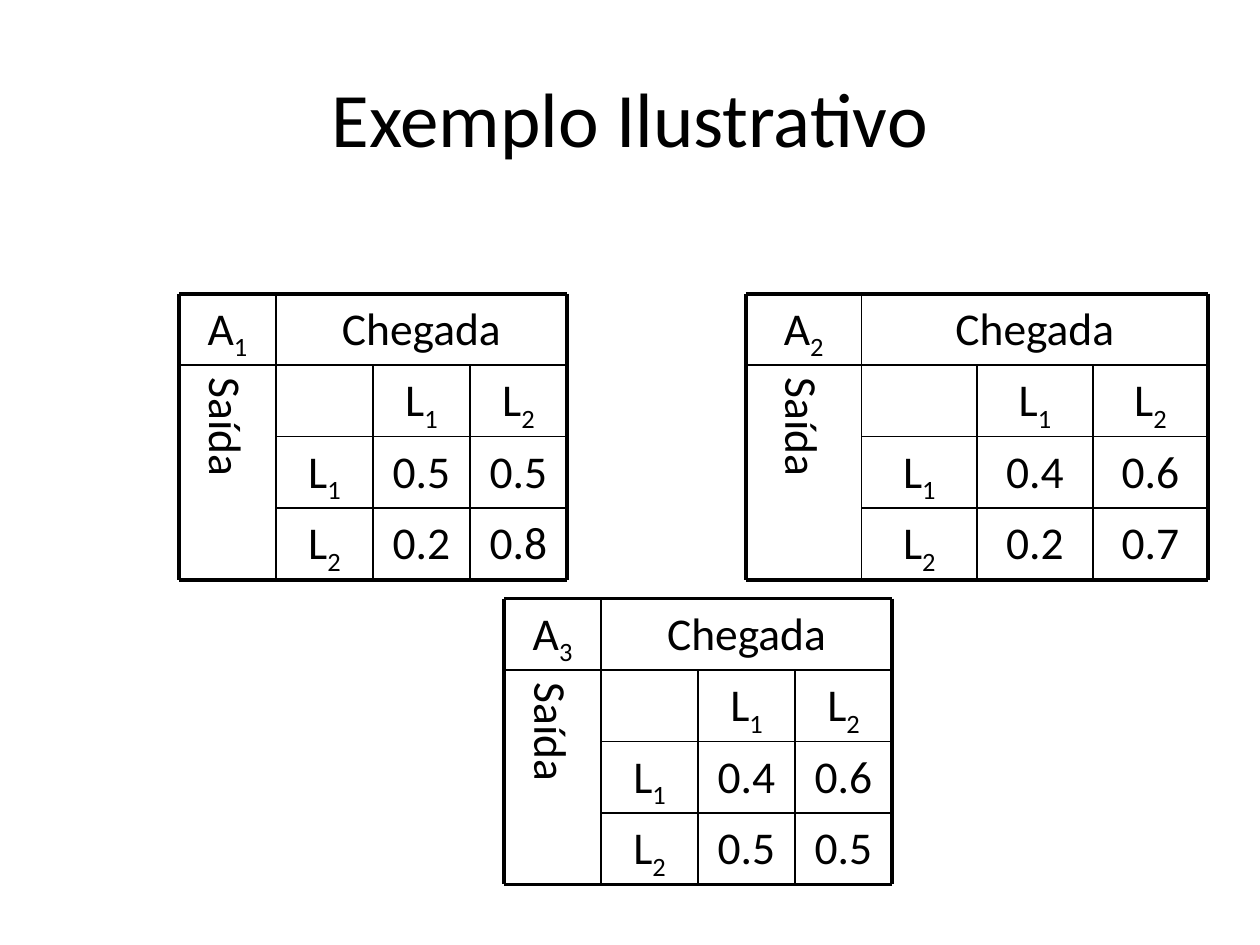
"""Build the slide with the three transition tables of the worked example."""
from lxml import etree
from pptx import Presentation
from pptx import util as u
from pptx.dml import color
from pptx.enum import shapes, text
from pptx.oxml import ns


def rgb(value):
    return color.RGBColor.from_string(value)


class Deck:
    FONT, INK = "Calibri", "000000"
    TITLE_SIZE, CELL_SIZE = 44, 26
    THICK, THIN = 2.25, 1

    def __init__(self):
        self.presentation = Presentation()
        self.presentation.slide_width = u.Inches(10)
        self.presentation.slide_height = u.Inches(7.5)
        layout = self.presentation.slide_layouts[5]
        self.slide = self.presentation.slides.add_slide(layout)

    def style(self, paragraph, size, align=text.PP_ALIGN.CENTER):
        paragraph.alignment = align
        font = paragraph.font
        font.name, font.size = self.FONT, u.Pt(size)
        font.color.rgb = rgb(self.INK)

    def title(self, words, left, top, width, height):
        heading = self.slide.shapes.title
        heading.left, heading.top = u.Inches(left), u.Inches(top)
        heading.width, heading.height = u.Inches(width), u.Inches(height)
        heading.text_frame.text = words
        heading.text_frame.vertical_anchor = text.MSO_ANCHOR.MIDDLE
        self.style(heading.text_frame.paragraphs[0], self.TITLE_SIZE)

    def label(self, group, words, left, top, width, height, vertical=False):
        box = group.shapes.add_textbox(u.Inches(left), u.Inches(top), u.Inches(width), u.Inches(height))
        frame = box.text_frame
        frame.word_wrap = True
        paragraph = frame.paragraphs[0]
        base, _, index = words.partition("_")
        paragraph.add_run().text = base
        if index:
            subscript = paragraph.add_run()
            subscript.text = index
            subscript._r.get_or_add_rPr().set("baseline", "-25000")
        self.style(paragraph, self.CELL_SIZE)
        paragraph.space_before = u.Pt(1)
        if vertical:
            paragraph.alignment = text.PP_ALIGN.LEFT
            frame.vertical_anchor = text.MSO_ANCHOR.MIDDLE
            frame._txBody.bodyPr.set("vert", "eaVert")

    def rule(self, group, x1, y1, x2, y2, points):
        line = group.shapes.add_connector(
            shapes.MSO_CONNECTOR.STRAIGHT, u.Inches(x1), u.Inches(y1), u.Inches(x2), u.Inches(y2)
        )
        line.line.color.rgb = rgb(self.INK)
        line.line.width = u.Pt(points)
        etree.SubElement(line._element.spPr, ns.qn("a:effectLst"))

    def matrix(self, name, values, left, top, width, height=2.27):
        group = self.slide.shapes.add_group_shape()
        column, row = width / 4, height / 4
        xs = [left + column * i for i in range(5)]
        ys = [top + row * i for i in range(5)]
        self.label(group, name, left, top, column, row)
        self.label(group, "Chegada", xs[1], top, 3 * column, row)
        self.label(group, "Saída", left, ys[1], column, 3 * row, vertical=True)
        grid = [["", "L_1", "L_2"], ["L_1", *values[0]], ["L_2", *values[1]]]
        for y, entries in zip(ys[1:], grid):
            for x, words in zip(xs[1:], entries):
                if words:
                    self.label(group, words, x, y, column, row)
        for i, (x, y) in enumerate(zip(xs, ys)):
            points = self.THICK if i in (0, 4) else self.THIN
            self.rule(group, xs[1] if i in (2, 3) else left, y, xs[4], y, points)
            self.rule(group, x, ys[1] if i in (2, 3) else top, x, ys[4], points)


def main():
    deck = Deck()
    deck.title("Exemplo Ilustrativo", 0.5, 0.3, 9, 1.25)
    deck.matrix("A_1", [("0.5", "0.5"), ("0.2", "0.8")], 1.42, 2.33, 3.08)
    deck.matrix("A_2", [("0.4", "0.6"), ("0.2", "0.7")], 5.92, 2.33, 3.67)
    deck.matrix("A_3", [("0.4", "0.6"), ("0.5", "0.5")], 4, 4.75, 3.08)
    deck.presentation.save("out.pptx")


if __name__ == "__main__":
    main()
